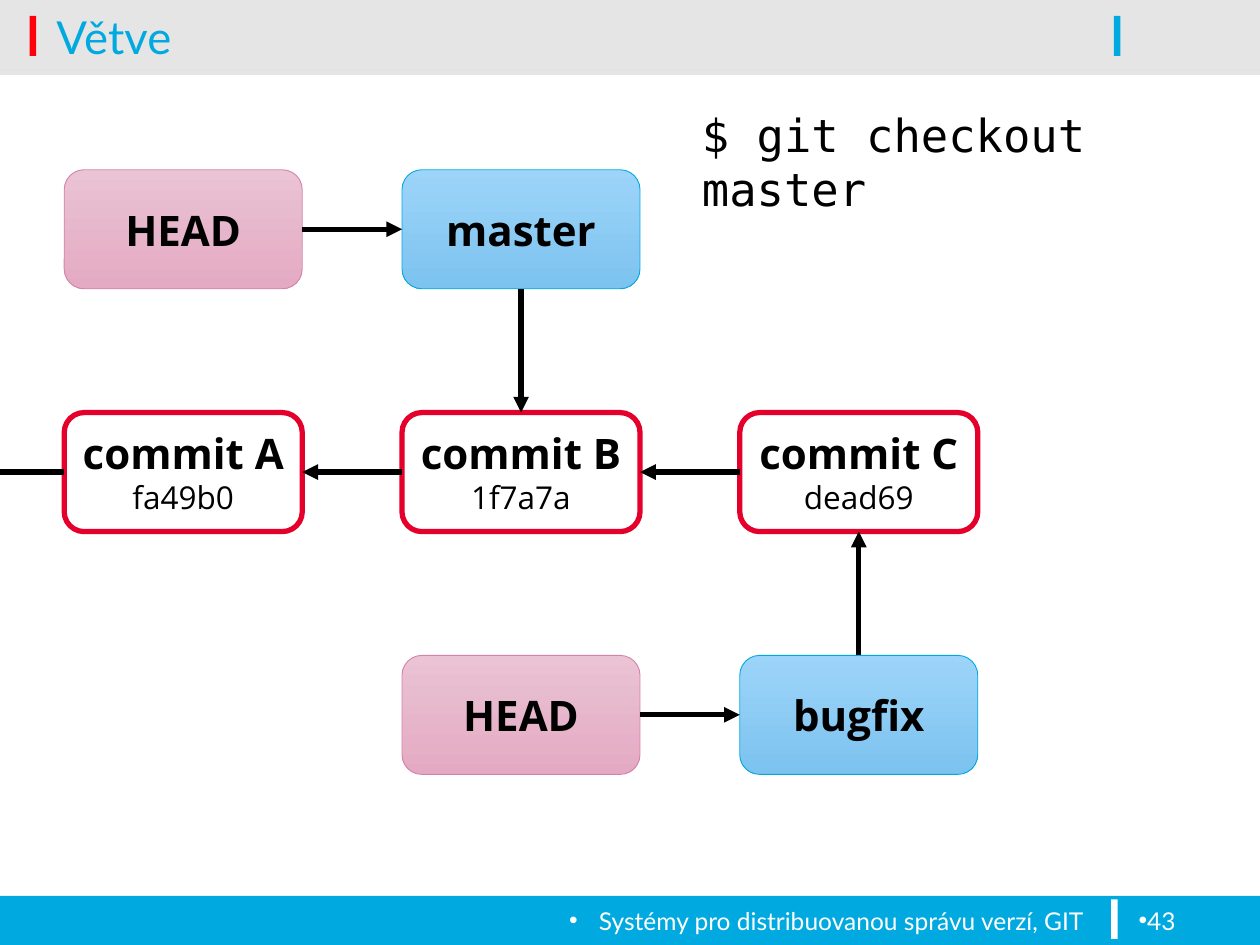
"""Build the slide on Git branches with its commit diagram."""
import pptx
import pptx.util
import pptx.dml.color
import pptx.enum.shapes
import pptx.enum.text
import pptx.oxml
import pptx.oxml.ns
from lxml import etree

Pt = pptx.util.Pt
RGBColor = pptx.dml.color.RGBColor
SHAPE = pptx.enum.shapes.MSO_SHAPE
ALIGN = pptx.enum.text.PP_ALIGN
ANCHOR = pptx.enum.text.MSO_ANCHOR
qn = pptx.oxml.ns.qn

BLACK = RGBColor(0x00, 0x00, 0x00)
WHITE = RGBColor(0xFF, 0xFF, 0xFF)
BLUE = RGBColor(0x00, 0xA9, 0xE0)
RED = RGBColor(0xFE, 0x00, 0x0C)
COMMIT_RED = RGBColor(0xE4, 0x00, 0x2B)
PINK_EDGE = RGBColor(0xD5, 0x82, 0xA9)
BRANCH_BLUES = (RGBColor(0x9D, 0xD4, 0xF9), RGBColor(0x7C, 0xC3, 0xEF))
HEAD_PINKS = (RGBColor(0xEA, 0xC3, 0xD4), RGBColor(0xE4, 0xAA, 0xC3))

NODE_WIDTH, NODE_HEIGHT = 136, 68
GRID_LEFT, GRID_TOP = 36.75, 97
COLUMN_STEP, ROW_STEP = 193, 138.75
TOP, LEFT, BOTTOM, RIGHT = range(4)


def format_run(run, size, font, color, bold=False):
    """Set the typeface of one run."""
    run.font.size = Pt(size)
    run.font.name = font
    run.font.color.rgb = color
    run.font.bold = bold


def add_bar(slide, left, top, width, height, color, opacity=None):
    """Add a plain rectangle of the slide frame."""
    bar = slide.shapes.add_shape(SHAPE.RECTANGLE, Pt(left), Pt(top), Pt(width), Pt(height))
    bar.shadow.inherit = False
    bar.fill.solid()
    bar.fill.fore_color.rgb = color
    bar.line.fill.background()
    if opacity is not None:
        shade = bar.element.spPr.find(".//" + qn("a:srgbClr"))
        etree.SubElement(shade, qn("a:alpha"), val=str(opacity * 1000))


def add_text(slide, left, top, width, height, text, size, font, color):
    """Add a wrapping text box and return its paragraph."""
    box = slide.shapes.add_textbox(Pt(left), Pt(top), Pt(width), Pt(height))
    box.text_frame.word_wrap = True
    paragraph = box.text_frame.paragraphs[0]
    paragraph.text = text
    format_run(paragraph.runs[0], size, font, color)
    return paragraph


def add_footer(slide, left, width, text, align, hanging):
    """Add a bulleted footer text."""
    paragraph = add_text(slide, left, 514, width, 26, text, 14, "Lato", WHITE)
    paragraph.alignment = align
    properties = paragraph._p.get_or_add_pPr()
    properties.set("marL", str(Pt(hanging)))
    properties.set("indent", str(-Pt(hanging)))
    etree.SubElement(properties, qn("a:buFont"), typeface="Arial")
    etree.SubElement(properties, qn("a:buChar"), char="•")


def add_node(slide, column, row, text, edge, edge_width):
    """Add a rounded box at a grid place."""
    node = slide.shapes.add_shape(
        SHAPE.ROUNDED_RECTANGLE,
        Pt(GRID_LEFT + column * COLUMN_STEP), Pt(GRID_TOP + row * ROW_STEP),
        Pt(NODE_WIDTH), Pt(NODE_HEIGHT))
    node.shadow.inherit = False
    node.line.color.rgb = edge
    node.line.width = Pt(edge_width)
    node.text_frame.vertical_anchor = ANCHOR.MIDDLE
    paragraph = node.text_frame.paragraphs[0]
    paragraph.text = text
    paragraph.alignment = ALIGN.CENTER
    format_run(paragraph.runs[0], 24, "Open Sans", BLACK, True)
    for checksum in paragraph.runs[1:]:
        format_run(checksum, 18, "Open Sans", BLACK)
    return node


def add_commit(slide, column, name, checksum):
    """Add a commit with its checksum on the middle row."""
    commit = add_node(slide, column, 1, f"{name}\v{checksum}", COMMIT_RED, 3)
    commit.fill.solid()
    commit.fill.fore_color.rgb = WHITE
    return commit


def add_reference(slide, column, row, name, edge, shades):
    """Add a branch or HEAD box with a vertical gradient."""
    reference = add_node(slide, column, row, name, edge, 0.5)
    reference.fill.gradient()
    reference.fill.gradient_angle = 270
    for stop, shade in zip(reference.fill.gradient_stops, shades):
        stop.color.rgb = shade
    return reference


def add_arrow(slide, source, source_side, target=None, target_side=None):
    """Add an arrow between two nodes, or out over the left edge of the slide."""
    middle = source.top + source.height // 2
    arrow = slide.shapes.add_connector(
        pptx.enum.shapes.MSO_CONNECTOR.STRAIGHT,
        source.left, middle, source.left - Pt(COLUMN_STEP - NODE_WIDTH), middle)
    arrow.begin_connect(source, source_side)
    if target is not None:
        arrow.end_connect(target, target_side)
    arrow.line.color.rgb = BLACK
    arrow.line.width = Pt(3)
    etree.SubElement(arrow.line._get_or_add_ln(), qn("a:tailEnd"), type="triangle")
    etree.SubElement(arrow.element.spPr, qn("a:effectLst"))


def add_frame(slide):
    """Add the header and footer bars with their markers."""
    add_bar(slide, 0, 512, 720, 28, BLUE)
    add_bar(slide, 0, 40, 720, 3, BLACK, 10)
    add_bar(slide, 0, 0, 720, 40, BLACK, 10)
    add_bar(slide, 17, 9, 3.75, 23, RED)
    add_bar(slide, 635, 514, 3.75, 22.5, WHITE)
    add_bar(slide, 636.5, 9, 3.75, 23, BLUE)


def set_title(slide, text):
    """Place the title over the header bar."""
    title = slide.shapes.title
    title.left, title.top, title.width, title.height = Pt(25), Pt(-8), Pt(606), Pt(57)
    title.text_frame.text = text
    title.text_frame.vertical_anchor = ANCHOR.MIDDLE
    paragraph = title.text_frame.paragraphs[0]
    paragraph.alignment = ALIGN.LEFT
    format_run(paragraph.runs[0], 26, "Lato", BLUE)
    slide.shapes.element.append(title.element)


def add_diagram(slide):
    """Add the commits, the branches and the arrows between them."""
    commit_a = add_commit(slide, 0, "commit A", "fa49b0")
    commit_b = add_commit(slide, 1, "commit B", "1f7a7a")
    commit_c = add_commit(slide, 2, "commit C", "dead69")
    master = add_reference(slide, 1, 0, "master", BLUE, BRANCH_BLUES)
    bugfix = add_reference(slide, 2, 2, "bugfix", BLUE, BRANCH_BLUES)
    master_head = add_reference(slide, 0, 0, "HEAD", PINK_EDGE, HEAD_PINKS)
    bugfix_head = add_reference(slide, 1, 2, "HEAD", PINK_EDGE, HEAD_PINKS)

    add_arrow(slide, commit_a, LEFT)
    add_arrow(slide, commit_b, LEFT, commit_a, RIGHT)
    add_arrow(slide, commit_c, LEFT, commit_b, RIGHT)
    add_arrow(slide, master, BOTTOM, commit_b, TOP)
    add_arrow(slide, bugfix, TOP, commit_c, BOTTOM)
    add_arrow(slide, master_head, RIGHT, master, LEFT)
    add_arrow(slide, bugfix_head, RIGHT, bugfix, LEFT)


def main():
    """Build and save the presentation."""
    presentation = pptx.Presentation()
    presentation.slide_width, presentation.slide_height = Pt(720), Pt(540)
    slide = presentation.slides.add_slide(presentation.slide_layouts[5])
    add_frame(slide)
    set_title(slide, "Větve")
    add_diagram(slide)
    add_text(slide, 394, 57.5, 317, 39, "$ git checkout master", 26, "DejaVu Sans Mono", BLACK)
    add_footer(slide, 8.5, 618, "Systémy pro distribuovanou správu verzí, GIT", ALIGN.RIGHT, 17)
    add_footer(slide, 643.5, 65, "43", ALIGN.LEFT, 0)
    presentation.save("out.pptx")


if __name__ == "__main__":
    main()
